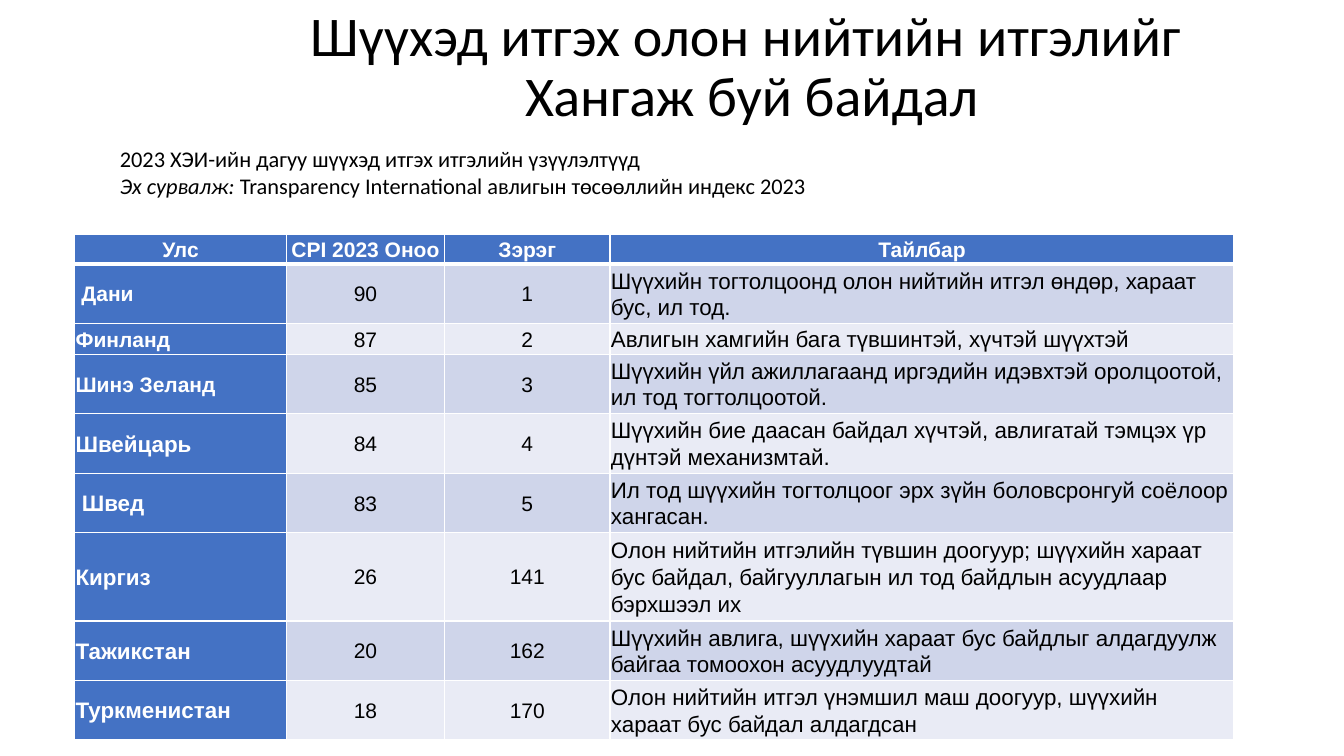
from dataclasses import dataclass

import pptx
import pptx.dml.color
import pptx.enum.text
import pptx.oxml
import pptx.oxml.ns
import pptx.util

Inches = pptx.util.Inches
Pt = pptx.util.Pt
RGBColor = pptx.dml.color.RGBColor
Align = pptx.enum.text.PP_ALIGN
Anchor = pptx.enum.text.MSO_ANCHOR

BLACK = RGBColor(0x00, 0x00, 0x00)
WHITE = RGBColor(0xFF, 0xFF, 0xFF)
BLUE = RGBColor(0x44, 0x72, 0xC4)
BAND_DARK = RGBColor(0xCF, 0xD5, 0xEA)
BAND_LIGHT = RGBColor(0xE9, 0xEB, 0xF5)

HEADINGS = ("Улс", "CPI 2023 Оноо", "Зэрэг", "Тайлбар")
COLUMN_WIDTHS = (2.1, 1.57, 1.64, 6.19)
HEADER_HEIGHT = 0.29


@dataclass(frozen=True)
class Country:
    name: str
    score: int
    rank: int
    comment: str
    height: float = 0.55
    name_size: int = 16


@dataclass(frozen=True)
class CellStyle:
    fill: RGBColor
    color: RGBColor
    size: int
    bold: bool
    align: Align
    top_border: float = 1
    bottom_border: float = 1


COUNTRIES = (
    Country(" Дани", 90, 1,
            "Шүүхийн тогтолцоонд олон нийтийн итгэл өндөр, хараат бус, ил тод.",
            name_size=15),
    Country("Финланд", 87, 2,
            "Авлигын хамгийн бага түвшинтэй, хүчтэй шүүхтэй",
            height=0.29, name_size=15),
    Country("Шинэ Зеланд", 85, 3,
            "Шүүхийн үйл ажиллагаанд иргэдийн идэвхтэй оролцоотой, ил тод тогтолцоотой.",
            name_size=15),
    Country("Швейцарь", 84, 4,
            "Шүүхийн бие даасан байдал хүчтэй, авлигатай тэмцэх үр дүнтэй механизмтай."),
    Country(" Швед", 83, 5,
            "Ил тод шүүхийн тогтолцоог эрх зүйн боловсронгуй соёлоор хангасан."),
    Country("Киргиз", 26, 141,
            "Олон нийтийн итгэлийн түвшин доогуур; шүүхийн хараат бус байдал, "
            "байгууллагын ил тод байдлын асуудлаар бэрхшээл их",
            height=0.81),
    Country("Тажикстан", 20, 162,
            "Шүүхийн авлига, шүүхийн хараат бус байдлыг алдагдуулж байгаа "
            "томоохон асуудлуудтай"),
    Country("Туркменистан", 18, 170,
            "Олон нийтийн итгэл үнэмшил маш доогуур, шүүхийн хараат бус байдал алдагдсан",
            height=0.59),
)


def style_font(font: pptx.text.text.Font, name: str, size: int, color: RGBColor) -> None:
    font.name = name
    font.size = Pt(size)
    font.color.rgb = color


def add_borders(cell: pptx.table._Cell, top: float, bottom: float) -> None:
    """Put white lines round a cell, ahead of its fill as the schema requires."""
    properties = cell._tc.get_or_add_tcPr()
    widths = {"lnL": 1, "lnR": 1, "lnT": top, "lnB": bottom}
    for position, (tag, width) in enumerate(widths.items()):
        line = pptx.oxml.parse_xml(
            f'<a:{tag} {pptx.oxml.ns.nsdecls("a")} w="{int(Pt(width))}">'
            f'<a:solidFill><a:srgbClr val="{WHITE}"/></a:solidFill></a:{tag}>')
        properties.insert(position, line)


def fill_cell(cell: pptx.table._Cell, text: str, style: CellStyle) -> None:
    cell.text = text
    cell.vertical_anchor = Anchor.MIDDLE
    cell.margin_left = cell.margin_right = Inches(0.01)
    cell.margin_top = cell.margin_bottom = Inches(0.01)
    cell.fill.solid()
    cell.fill.fore_color.rgb = style.fill
    add_borders(cell, style.top_border, style.bottom_border)
    para = cell.text_frame.paragraphs[0]
    para.alignment = style.align
    para.line_spacing = 1.07
    style_font(para.font, "Arial", style.size, style.color)
    para.font.bold = style.bold


def add_title(page: pptx.slide.Slide) -> None:
    box = page.shapes.add_textbox(Inches(1.78), Inches(0.28), Inches(11.35), Inches(1.05))
    frame = box.text_frame
    frame.word_wrap = True
    frame.vertical_anchor = Anchor.BOTTOM
    frame.text = "Шүүхэд итгэх олон нийтийн итгэлийг \nХангаж буй байдал"
    for para in frame.paragraphs:
        para.alignment = Align.CENTER
        para.line_spacing = 0.9
        style_font(para.font, "Calibri", 40, BLACK)


def add_source_note(page: pptx.slide.Slide) -> None:
    box = page.shapes.add_textbox(Inches(1.09), Inches(1.39), Inches(7.18), Inches(0.94))
    frame = box.text_frame
    frame.word_wrap = True
    frame.text = "2023 ХЭИ-ийн дагуу шүүхэд итгэх итгэлийн үзүүлэлтүүд"
    source = frame.add_paragraph()
    label = source.add_run()
    label.text = "Эх сурвалж: "
    label.font.italic = True
    source.add_run().text = "Transparency International авлигын төсөөллийн индекс 2023"
    for para in frame.paragraphs:
        style_font(para.font, "Calibri", 16, BLACK)


def add_country_table(page: pptx.slide.Slide) -> None:
    heights = [HEADER_HEIGHT] + [country.height for country in COUNTRIES]
    table = page.shapes.add_table(
        len(heights), len(HEADINGS), Inches(0.74), Inches(2.33),
        Inches(sum(COLUMN_WIDTHS)), Inches(sum(heights))).table
    for column, width in zip(table.columns, COLUMN_WIDTHS):
        column.width = Inches(width)
    for row, height in zip(table.rows, heights):
        row.height = Inches(height)

    header = CellStyle(BLUE, WHITE, 15, True, Align.CENTER, bottom_border=3)
    for column, heading in enumerate(HEADINGS):
        fill_cell(table.cell(0, column), heading, header)

    for row, country in enumerate(COUNTRIES, start=1):
        band = BAND_DARK if row % 2 else BAND_LIGHT
        top = 3 if row == 1 else 1
        name = CellStyle(BLUE, WHITE, country.name_size, True, Align.LEFT, top)
        number = CellStyle(band, BLACK, 15, False, Align.CENTER, top)
        comment = CellStyle(band, BLACK, 16, False, Align.LEFT, top)
        fill_cell(table.cell(row, 0), country.name, name)
        fill_cell(table.cell(row, 1), str(country.score), number)
        fill_cell(table.cell(row, 2), str(country.rank), number)
        fill_cell(table.cell(row, 3), country.comment, comment)


def main() -> None:
    deck = pptx.Presentation()
    deck.slide_width = Inches(13.33)
    deck.slide_height = Inches(7.5)
    page = deck.slides.add_slide(deck.slide_layouts[6])
    add_title(page)
    add_country_table(page)
    add_source_note(page)
    deck.save("out.pptx")


if __name__ == "__main__":
    main()
